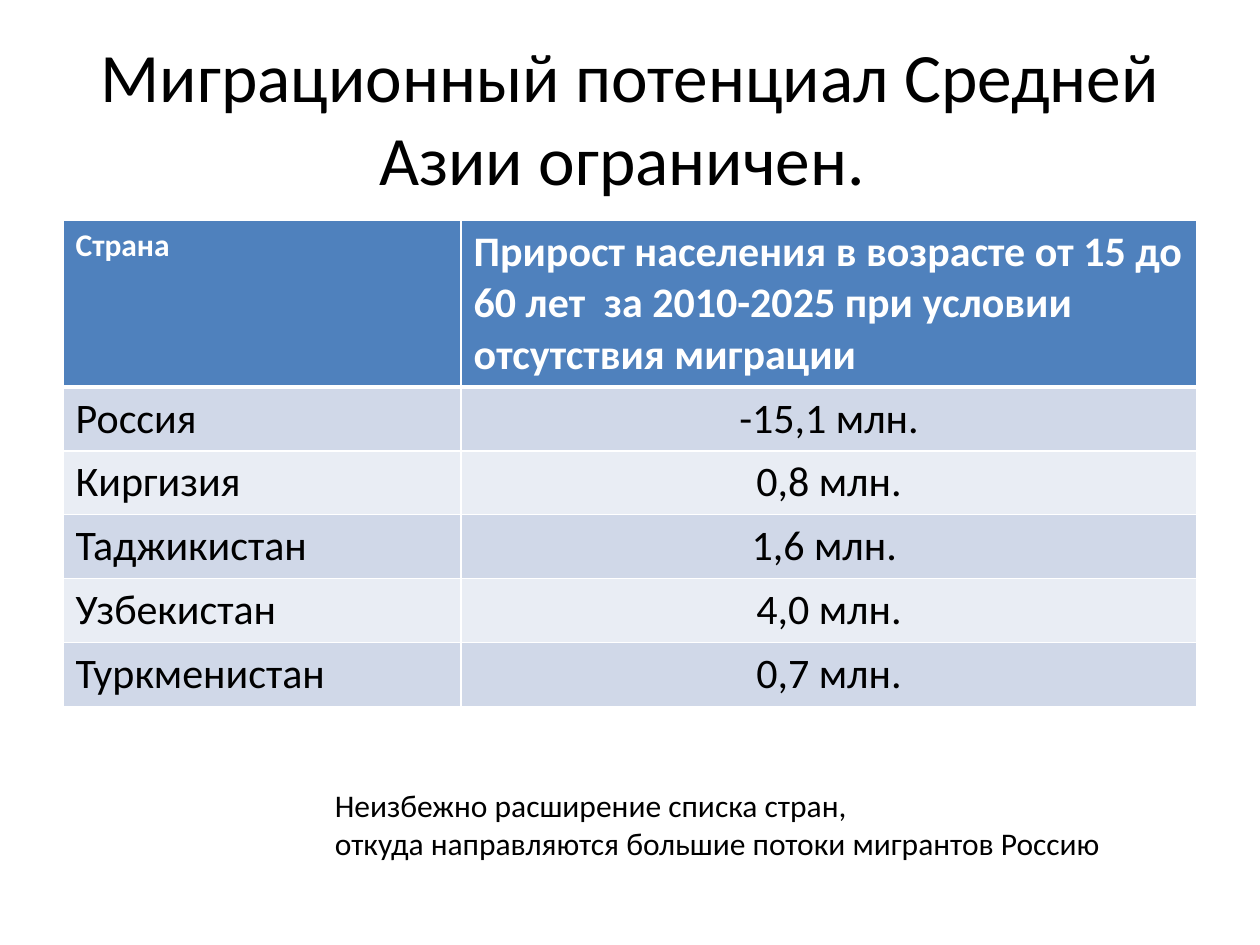
from lxml import etree
from pptx import Presentation
from pptx.dml.color import RGBColor
from pptx.enum.text import MSO_ANCHOR, MSO_AUTO_SIZE, PP_ALIGN
from pptx.oxml.ns import qn
from pptx.util import Pt

LEFT, CENTER = PP_ALIGN.LEFT, PP_ALIGN.CENTER
MIDDLE = MSO_ANCHOR.MIDDLE
NO_FIT, GROW = MSO_AUTO_SIZE.NONE, MSO_AUTO_SIZE.SHAPE_TO_FIT_TEXT
TITLE_ONLY = 5

BLACK, WHITE = "000000", "FFFFFF"
HEADER_FILL = "4F81BD"
BAND_FILLS = ("D0D8E8", "E9EDF4")
THIN, THICK = 1, 3

HEADINGS = (
    "Страна",
    "Прирост населения в возрасте от 15 до 60 лет  за 2010-2025 при условии отсутствия миграции",
)
COUNTRY_GROWTH = (
    ("Россия", " -15,1 млн. "),
    ("Киргизия", "0,8 млн."),
    ("Таджикистан", "1,6 млн. "),
    ("Узбекистан", "4,0 млн."),
    ("Туркменистан", "0,7 млн."),
)
CONCLUSION = (
    "Неизбежно расширение списка стран,",
    "откуда направляются большие потоки мигрантов Россию",
)


def color(hex_value):
    return RGBColor.from_string(hex_value)


class SlideBuilder:
    font_name = "Calibri"

    def __init__(self, slide):
        self.slide = slide

    def fill_text(self, frame, lines, size, ink=BLACK, bold=False, align=LEFT):
        font_format = {"name": self.font_name, "size": Pt(size), "bold": bold}
        for index, line in enumerate(lines):
            paragraph = frame.add_paragraph() if index else frame.paragraphs[0]
            paragraph.alignment = align
            run = paragraph.add_run()
            run.text = line
            for attribute, value in font_format.items():
                setattr(run.font, attribute, value)
            run.font.color.rgb = color(ink)

    def title(self, text, left, top, width, height, size):
        heading = self.slide.shapes.title
        place = {"left": left, "top": top, "width": width, "height": height}
        for attribute, value in place.items():
            setattr(heading, attribute, Pt(value))
        frame = heading.text_frame
        frame.auto_size = NO_FIT
        frame.vertical_anchor = MIDDLE
        self.fill_text(frame, [text], size, align=CENTER)

    def text(self, lines, left, top, width, height, size):
        frame = self.slide.shapes.add_textbox(
            Pt(left), Pt(top), Pt(width), Pt(height)).text_frame
        frame.word_wrap = False
        frame.auto_size = GROW
        self.fill_text(frame, lines, size)

    def cell(self, cell, text, fill, top_line=THIN, bottom_line=THIN, **text_format):
        cell.fill.solid()
        cell.fill.fore_color.rgb = color(fill)
        self.fill_text(cell.text_frame, [text], **text_format)
        self.borders(cell, {"lnL": THIN, "lnR": THIN, "lnT": top_line, "lnB": bottom_line})

    def borders(self, cell, widths):
        """Draw white cell edges; the schema wants them ahead of the fill."""
        properties = cell._tc.get_or_add_tcPr()
        for position, (edge, width) in enumerate(widths.items()):
            line = etree.Element(qn(f"a:{edge}"), w=str(Pt(width)))
            solid = etree.SubElement(line, qn("a:solidFill"))
            etree.SubElement(solid, qn("a:srgbClr"), val=WHITE)
            properties.insert(position, line)

    def table(self, headings, records, left, top, column_widths, header_height, row_height):
        row_heights = [header_height] + [row_height] * len(records)
        table = self.slide.shapes.add_table(
            len(row_heights), len(column_widths), Pt(left), Pt(top),
            Pt(sum(column_widths)), Pt(sum(row_heights))).table
        for column, width in zip(table.columns, column_widths):
            column.width = Pt(width)
        for row, height in zip(table.rows, row_heights):
            row.height = Pt(height)
        for column, (heading, size) in enumerate(zip(headings, (18, 24))):
            self.cell(table.cell(0, column), heading, HEADER_FILL, bottom_line=THICK,
                      size=size, ink=WHITE, bold=True)
        for row, record in enumerate(records, start=1):
            fill = BAND_FILLS[(row - 1) % 2]
            top_line = THICK if row == 1 else THIN
            for column, (value, align) in enumerate(zip(record, (LEFT, CENTER))):
                self.cell(table.cell(row, column), value, fill, top_line=top_line,
                          size=24, align=align)


def main():
    presentation = Presentation()
    presentation.slide_width, presentation.slide_height = Pt(720), Pt(540)
    builder = SlideBuilder(
        presentation.slides.add_slide(presentation.slide_layouts[TITLE_ONLY]))
    builder.title("Миграционный потенциал Средней Азии ограничен. ",
                  36, 21.6, 648, 90, size=39.6)
    builder.table(HEADINGS, COUNTRY_GROWTH, 36, 126, (227.5, 420.5),
                  header_height=95, row_height=36.5)
    builder.text(CONCLUSION, 184.3, 445.7, 460.8, 51, size=18)
    presentation.save("out.pptx")


if __name__ == "__main__":
    main()
